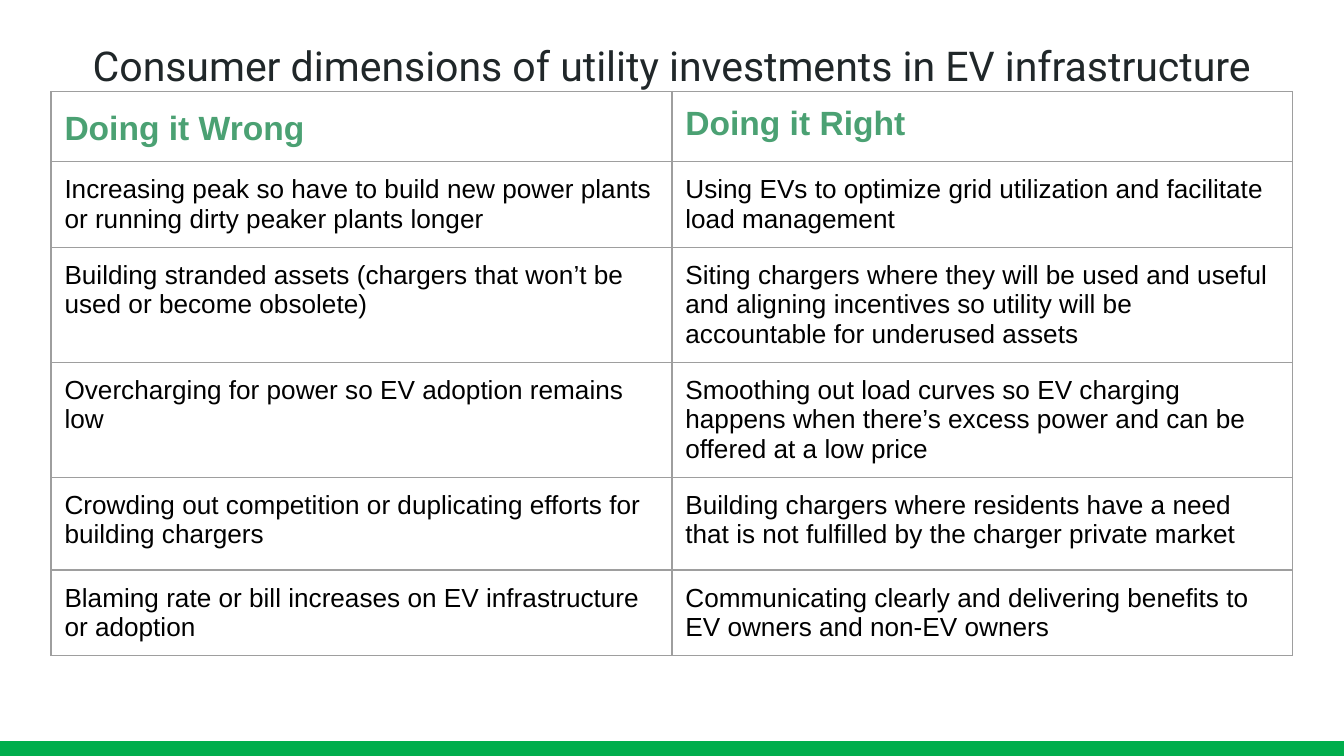
import dataclasses

import lxml.etree
import pptx
import pptx.dml.color
import pptx.enum.shapes
import pptx.enum.text
import pptx.oxml.ns
import pptx.util

Inches = pptx.util.Inches
Pt = pptx.util.Pt
qn = pptx.oxml.ns.qn
WIDE = 10
HIGH = WIDE * 9 / 16


@dataclasses.dataclass(frozen=True)
class Theme:
    ink: str = "202729"
    body: str = "000000"
    head: str = "4BA173"
    bar: str = "00AE4D"
    rule: str = "9E9E9E"
    title_font: str = "Roboto"
    font: str = "Arial"
    title_size: int = 22
    head_size: int = 18
    size: int = 14
    line: float = 0.75
    inset: float = 0.1


@dataclasses.dataclass(frozen=True)
class Row:
    wrong: str
    right: str
    height: float


THEME = Theme()
ROWS = [
    Row("Doing it Wrong", "Doing it Right", 0.5),
    Row("Increasing peak so have to build new power plants or running dirty peaker plants longer",
        "Using EVs to optimize grid utilization and facilitate load management", 0.59),
    Row("Building stranded assets (chargers that won’t be used or become obsolete)",
        "Siting chargers where they will be used and useful and aligning incentives "
        "so utility will be accountable for underused assets", 0.81),
    Row("Overcharging for power so EV adoption remains low",
        "Smoothing out load curves so EV charging happens when there’s excess power "
        "and can be offered at a low price", 0.81),
    Row("Crowding out competition or duplicating efforts for building chargers",
        "Building chargers where residents have a need that is not fulfilled "
        "by the charger private market", 0.69),
    Row("Blaming rate or bill increases on EV infrastructure or adoption",
        "Communicating clearly and delivering benefits to EV owners and non-EV owners", 0.6),
]


def color(code: str) -> pptx.dml.color.RGBColor:
    return pptx.dml.color.RGBColor.from_string(code)


def write(frame, text: str, *, size: float, ink: str, font: str = THEME.font,
          bold: bool = False, align=pptx.enum.text.PP_ALIGN.LEFT, spacing: float = 1.0) -> None:
    para = frame.paragraphs[0]
    para.alignment = align
    para.line_spacing = spacing
    run = para.add_run()
    run.text = text
    run.font.name = font
    run.font.size = Pt(size)
    run.font.bold = bold
    run.font.color.rgb = color(ink)


def pad(box) -> None:
    """Set the same inset on all sides of a cell or text frame."""
    for side in ("left", "right", "top", "bottom"):
        setattr(box, f"margin_{side}", Inches(THEME.inset))


def border(cell) -> None:
    props = cell.fill._xPr
    for spot, side in enumerate(("lnL", "lnR", "lnT", "lnB")):
        line = lxml.etree.Element(qn(f"a:{side}"), w=str(Pt(THEME.line)))
        fill = lxml.etree.SubElement(line, qn("a:solidFill"))
        lxml.etree.SubElement(fill, qn("a:srgbClr"), val=THEME.rule)
        props.insert(spot, line)


def add_title(slide, text: str) -> None:
    title = slide.shapes.title
    title.left, title.top = Inches(0.34), Inches(0.2)
    title.width, title.height = Inches(WIDE - 2 * 0.34), Inches(0.63)
    frame = title.text_frame
    pad(frame)
    frame.word_wrap = True
    frame.auto_size = pptx.enum.text.MSO_AUTO_SIZE.NONE
    frame.vertical_anchor = pptx.enum.text.MSO_ANCHOR.TOP
    write(frame, text, size=THEME.title_size, ink=THEME.ink, font=THEME.title_font,
          align=pptx.enum.text.PP_ALIGN.CENTER)


def add_bar(slide) -> None:
    height = 0.11
    bar = slide.shapes.add_shape(pptx.enum.shapes.MSO_SHAPE.RECTANGLE, 0, Inches(HIGH - height),
                                 Inches(WIDE), Inches(height))
    bar.shadow.inherit = False
    bar.fill.solid()
    bar.fill.fore_color.rgb = color(THEME.bar)
    bar.line.fill.background()


def add_grid(slide, rows: list[Row]) -> None:
    left = 0.38
    width = WIDE - 2 * left
    table = slide.shapes.add_table(len(rows), 2, Inches(left), Inches(0.68), Inches(width),
                                   Inches(sum(row.height for row in rows))).table
    table.first_row = table.horz_banding = False
    for col in table.columns:
        col.width = Inches(width / 2)
    for r, row in enumerate(rows):
        table.rows[r].height = Inches(row.height)
        for c, text in enumerate((row.wrong, row.right)):
            cell = table.cell(r, c)
            pad(cell)
            cell.fill.background()
            border(cell)
            top = r == 0
            write(cell.text_frame, text, bold=top,
                  size=THEME.head_size if top else THEME.size,
                  ink=THEME.head if top else THEME.body,
                  spacing=1.15 if top and c == 0 else 1.0)


def main() -> None:
    deck = pptx.Presentation()
    deck.slide_width, deck.slide_height = Inches(WIDE), Inches(HIGH)
    slide = deck.slides.add_slide(deck.slide_layouts.get_by_name("Title Only"))
    add_bar(slide)
    add_title(slide, "Consumer dimensions of utility investments in EV infrastructure")
    add_grid(slide, ROWS)
    deck.save("out.pptx")


if __name__ == "__main__":
    main()
